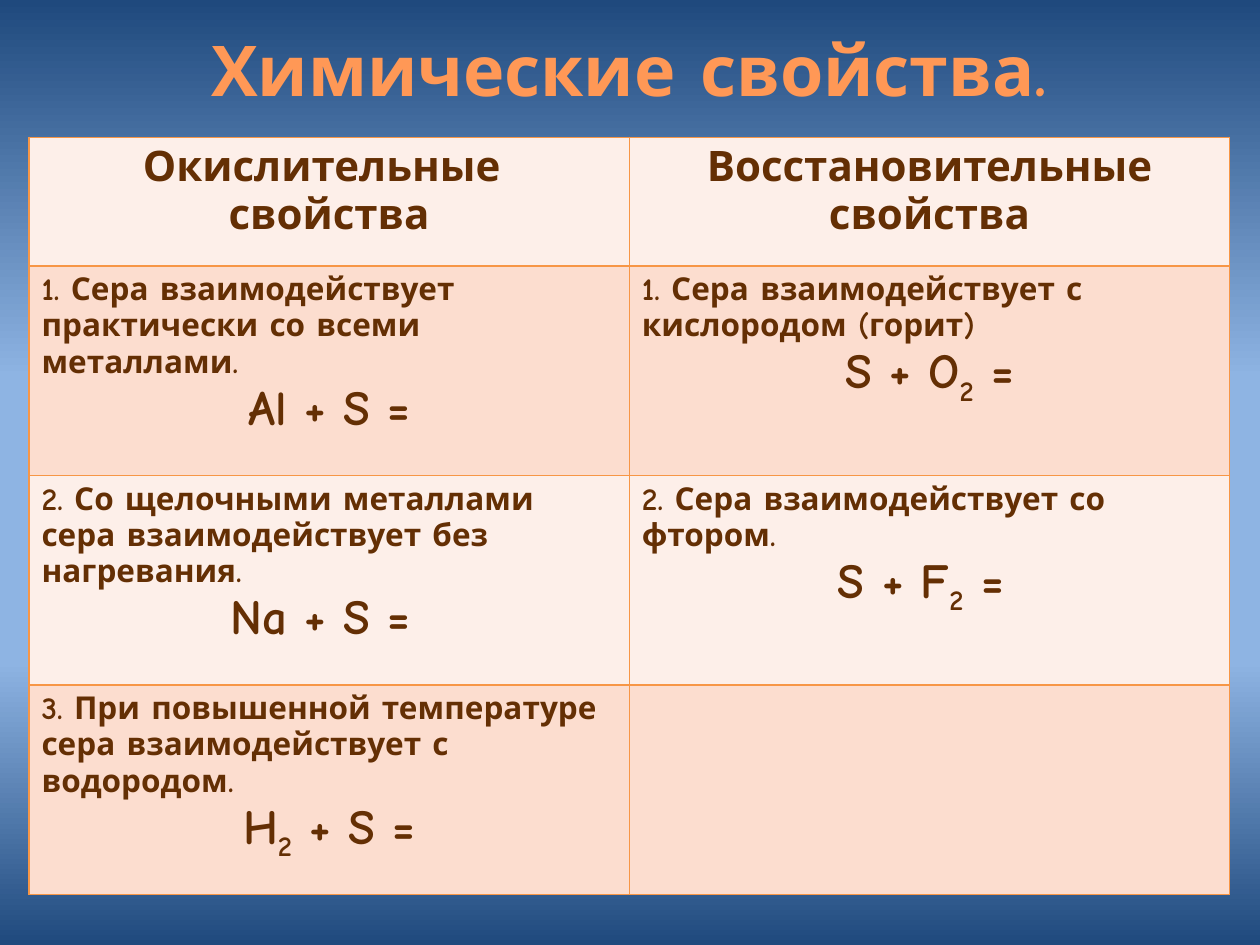
import pptx
import pptx.dml.color
import pptx.enum.text
import pptx.oxml
import pptx.oxml.ns
import pptx.util
from pptx.util import Inches

RGBColor = pptx.dml.color.RGBColor
qn = pptx.oxml.ns.qn

NAVY = RGBColor(0x1F, 0x49, 0x7D)
SKY = RGBColor(0x8E, 0xB4, 0xE3)
RUST = RGBColor(0x9D, 0x47, 0x00)
APRICOT = RGBColor(0xFF, 0x98, 0x56)
CREAM = RGBColor(0xFF, 0xF5, 0xF1)
BROWN = RGBColor(0x64, 0x2F, 0x04)
ORANGE = RGBColor(0xF7, 0x96, 0x46)
BANDS = [RGBColor(0xFD, 0xEF, 0xE9), RGBColor(0xFC, 0xDD, 0xCF)]

BACKGROUND_STOPS = [(0, NAVY), (40, SKY), (70, SKY), (100, NAVY)]
TITLE_STOPS = [(0, RUST), (78, APRICOT), (100, CREAM)]

CENTER = pptx.enum.text.PP_ALIGN.CENTER
LEFT = pptx.enum.text.PP_ALIGN.LEFT
TITLE_FONT = {"name": "Comic Neue", "size": pptx.util.Pt(40), "bold": True}
HEADING_FONT = {**TITLE_FONT, "size": pptx.util.Pt(24)}
STATEMENT_FONT = {**TITLE_FONT, "size": pptx.util.Pt(18)}
EQUATION_FONT = {**TITLE_FONT, "size": pptx.util.Pt(28)}

HEADINGS = [["Окислительные ", "свойства"], ["Восстановительные свойства"]]
REACTIONS = [
    [
        ("1. Сера взаимодействует практически со всеми металлами.", "Al + S ="),
        ("1. Сера взаимодействует с кислородом (горит)", "S + O|2| ="),
    ],
    [
        ("2. Со щелочными металлами сера взаимодействует без нагревания.", "Na + S = "),
        ("2. Сера взаимодействует со фтором.", "S + F|2| = "),
    ],
    [
        ("3. При повышенной температуре сера взаимодействует с водородом.", "H|2| + S ="),
        None,
    ],
]


def set_values(target, values):
    for name, value in values.items():
        setattr(target, name, value)


def apply_gradient(fill, element, stops):
    fill.gradient()
    fill.gradient_angle = 270
    stop_list = element.find(".//" + qn("a:gsLst"))
    for stop in list(stop_list):
        stop_list.remove(stop)
    for percent, color in stops:
        stop_list.append(pptx.oxml.parse_xml(
            f'<a:gs {pptx.oxml.ns.nsdecls("a")} pos="{percent * 1000}">'
            f'<a:srgbClr val="{color}"/></a:gs>'
        ))


def write_paragraphs(text_frame, lines):
    for index, (text, alignment, font_values) in enumerate(lines):
        paragraph = text_frame.paragraphs[0] if index == 0 else text_frame.add_paragraph()
        paragraph.alignment = alignment
        for part_index, part in enumerate(text.split("|")):
            run = paragraph.add_run()
            run.text = part
            set_values(run.font, font_values)
            run.font.color.rgb = BROWN
            if part_index % 2:
                run.font._element.set("baseline", "-25000")


def style_cell(cell, color):
    cell.fill.solid()
    cell.fill.fore_color.rgb = color
    properties = cell._tc.get_or_add_tcPr()
    for index, side in enumerate(("lnL", "lnR", "lnT", "lnB")):
        properties.insert(index, pptx.oxml.parse_xml(
            f'<a:{side} {pptx.oxml.ns.nsdecls("a")} w="{pptx.util.Pt(1)}">'
            f'<a:solidFill><a:srgbClr val="{ORANGE}"/></a:solidFill></a:{side}>'
        ))


def add_title(slide, left, top, width, height):
    text_frame = slide.shapes.add_textbox(left, top, width, height).text_frame
    text_frame.word_wrap = True
    text_frame.auto_size = pptx.enum.text.MSO_AUTO_SIZE.SHAPE_TO_FIT_TEXT
    paragraph = text_frame.paragraphs[0]
    paragraph.alignment = CENTER
    run = paragraph.add_run()
    run.text = "Химические свойства."
    set_values(run.font, TITLE_FONT)
    apply_gradient(run.font.fill, run.font._element, TITLE_STOPS)


def add_reaction_table(slide, left, top, width, height):
    heading_height = Inches(1.02)
    row_count, column_count = len(REACTIONS) + 1, len(HEADINGS)
    table = slide.shapes.add_table(row_count, column_count, left, top, width, height).table
    set_values(table, {"first_row": False, "horz_banding": False})
    for column in table.columns:
        column.width = width // column_count
    for index, row in enumerate(table.rows):
        row.height = (height - heading_height) // len(REACTIONS) if index else heading_height
        for cell in row.cells:
            style_cell(cell, BANDS[index % 2])
    for column_index, heading in enumerate(HEADINGS):
        lines = [(text, CENTER, HEADING_FONT) for text in heading]
        write_paragraphs(table.cell(0, column_index).text_frame, lines)
    for row_index, reactions in enumerate(REACTIONS, start=1):
        for column_index, reaction in enumerate(reactions):
            if reaction:
                statement, equation = reaction
                write_paragraphs(table.cell(row_index, column_index).text_frame, [
                    (statement, LEFT, STATEMENT_FONT),
                    (equation, CENTER, EQUATION_FONT),
                ])


def main():
    presentation = pptx.Presentation()
    set_values(presentation, {"slide_width": Inches(10), "slide_height": Inches(7.5)})
    slide = presentation.slides.add_slide(presentation.slide_layouts[6])
    apply_gradient(slide.background.fill, slide.element, BACKGROUND_STOPS)
    left, width = Inches(0.23), Inches(9.53)
    add_title(slide, left, Inches(0.16), width, Inches(0.77))
    add_reaction_table(slide, left, Inches(1.09), width, Inches(6.01))
    presentation.save("out.pptx")


if __name__ == "__main__":
    main()
